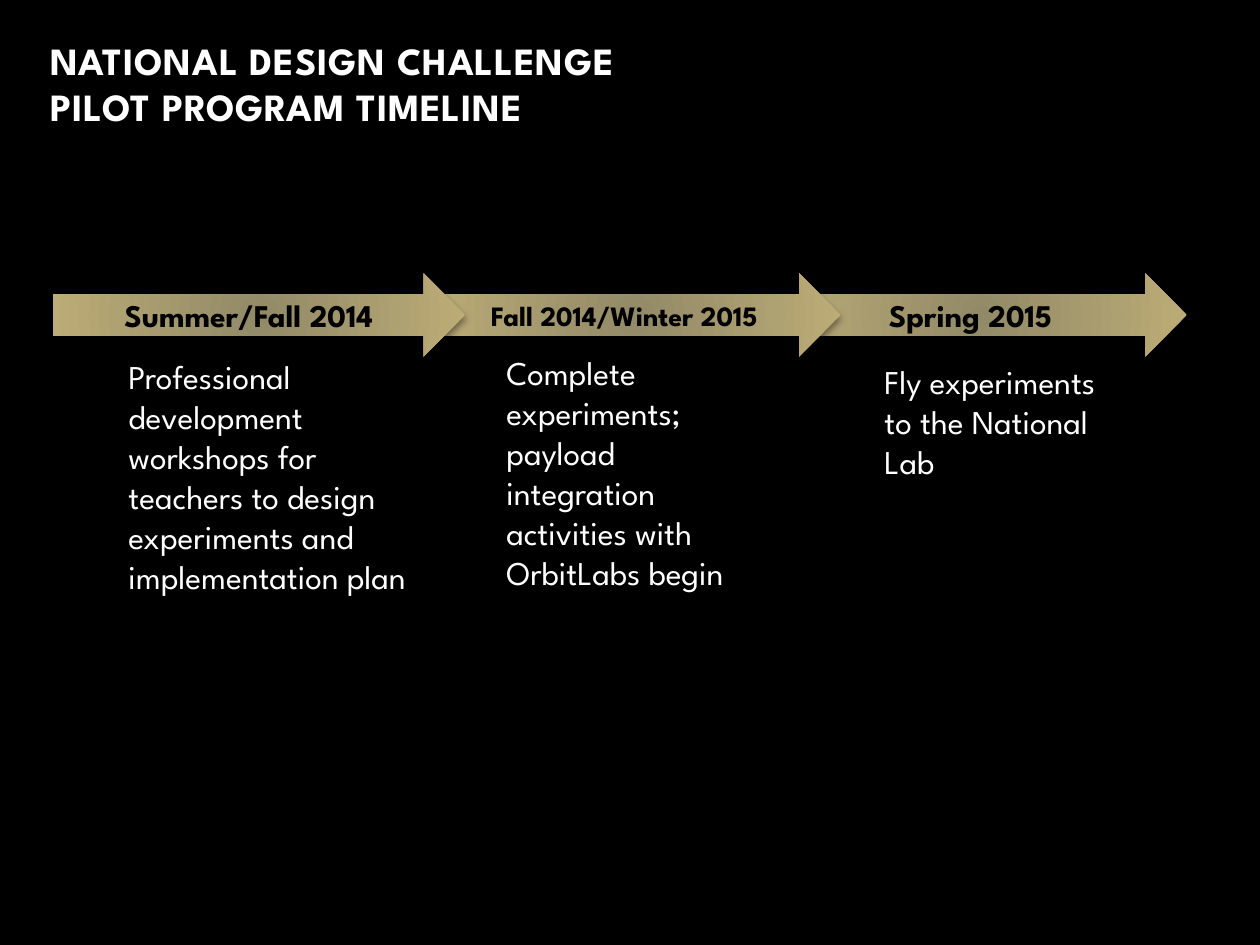
from dataclasses import dataclass

from lxml import etree
from pptx import Presentation
from pptx import oxml
from pptx import util as u
from pptx.dml.color import RGBColor
from pptx.enum import shapes, text
from pptx.oxml import ns
from pptx.slide import Slide

FONT = "League Spartan"
BLACK = RGBColor(0x00, 0x00, 0x00)
WHITE = RGBColor(0xFF, 0xFF, 0xFF)
DARK_GOLD = RGBColor(0x92, 0x89, 0x67)
LIGHT_GOLD = RGBColor(0xBC, 0xAC, 0x76)

ARROW_TOP, ARROW_WIDTH, ARROW_HEIGHT = 5.51, 8.31, 1.68

GRADIENT = f"""<a:gradFill {ns.nsdecls("a")} rotWithShape="1">
<a:gsLst>
<a:gs pos="0"><a:srgbClr val="{DARK_GOLD}"/></a:gs>
<a:gs pos="100000"><a:srgbClr val="{LIGHT_GOLD}"/></a:gs>
</a:gsLst>
<a:path path="circle">
<a:fillToRect l="100000" t="100000" r="100000" b="100000"/>
</a:path>
</a:gradFill>"""


@dataclass(frozen=True)
class Phase:
    period: str
    period_size: int
    arrow_left: float
    activity: str
    left: float
    top: float
    width: float
    height: float


PHASES = [
    Phase("Summer/Fall 2014", 18, 1.07,
          "Professional development workshops for teachers to design "
          "experiments and implementation plan", 2.34, 7.06, 6.78, 5.94),
    Phase("Fall 2014/Winter 2015", 16, 8.64,
          "Complete experiments; payload integration activities with "
          "OrbitLabs begin", 9.96, 6.98, 5.21, 5.94),
    Phase("Spring 2015", 18, 15.62,
          "Fly experiments to the National Lab", 17.58, 7.16, 4.9, 3.51),
]


def add_run(paragraph, content: str, size: int, color: RGBColor,
            bold: bool = False):
    run = paragraph.add_run()
    run.text = content
    run.font.name = FONT
    run.font.size = u.Pt(size)
    run.font.bold = bold
    run.font.color.rgb = color
    return run


def add_text_box(slide: Slide, left: float, top: float, width: float,
                 height: float):
    shape = slide.shapes.add_textbox(u.Cm(left), u.Cm(top), u.Cm(width), u.Cm(height))
    shape.text_frame.word_wrap = True
    return shape.text_frame


def add_title(slide: Slide, lines: list[str]) -> None:
    frame = add_text_box(slide, 0.76, 0.08, 19.56, 3.18)
    frame.vertical_anchor = text.MSO_ANCHOR.MIDDLE
    paragraph = frame.paragraphs[0]
    for index, line in enumerate(lines):
        if index:
            paragraph.add_line_break()
        run = add_run(paragraph, line, 22, WHITE, bold=True)
        run.font._element.set("spc", "50")


def add_arrow(slide: Slide, phase: Phase) -> None:
    shape = slide.shapes.add_shape(
        shapes.MSO_SHAPE.RIGHT_ARROW, u.Cm(phase.arrow_left), u.Cm(ARROW_TOP),
        u.Cm(ARROW_WIDTH), u.Cm(ARROW_HEIGHT))
    shape.line.fill.background()
    shape.shadow.inherit = False
    properties = shape._element.spPr
    properties.find(ns.qn("a:prstGeom")).addnext(oxml.parse_xml(GRADIENT))
    shadow = etree.SubElement(
        properties.find(ns.qn("a:effectLst")), ns.qn("a:outerShdw"),
        blurRad=str(u.Pt(4)), dist=str(u.Pt(2)), dir="5400000", rotWithShape="0")
    color = etree.SubElement(shadow, ns.qn("a:srgbClr"), val=str(BLACK))
    etree.SubElement(color, ns.qn("a:alpha"), val="40000")
    frame = shape.text_frame
    frame.word_wrap = True
    frame.vertical_anchor = text.MSO_ANCHOR.MIDDLE
    paragraph = frame.paragraphs[0]
    paragraph.alignment = text.PP_ALIGN.CENTER
    add_run(paragraph, phase.period, phase.period_size, BLACK, bold=True)


def add_activity(slide: Slide, phase: Phase) -> None:
    frame = add_text_box(slide, phase.left, phase.top, phase.width, phase.height)
    frame.auto_size = text.MSO_AUTO_SIZE.SHAPE_TO_FIT_TEXT
    add_run(frame.paragraphs[0], phase.activity, 19, WHITE)


def main() -> None:
    presentation = Presentation()
    presentation.slide_width = u.Cm(25.4)
    presentation.slide_height = u.Cm(19.05)
    slide = presentation.slides.add_slide(presentation.slide_layouts[6])
    slide.background.fill.solid()
    slide.background.fill.fore_color.rgb = BLACK
    add_title(slide, ["NATIONAL DESIGN CHALLENGE", "PILOT PROGRAM TIMELINE"])
    for phase in reversed(PHASES):
        add_arrow(slide, phase)
    for phase in PHASES:
        add_activity(slide, phase)
    presentation.save("out.pptx")


if __name__ == "__main__":
    main()
